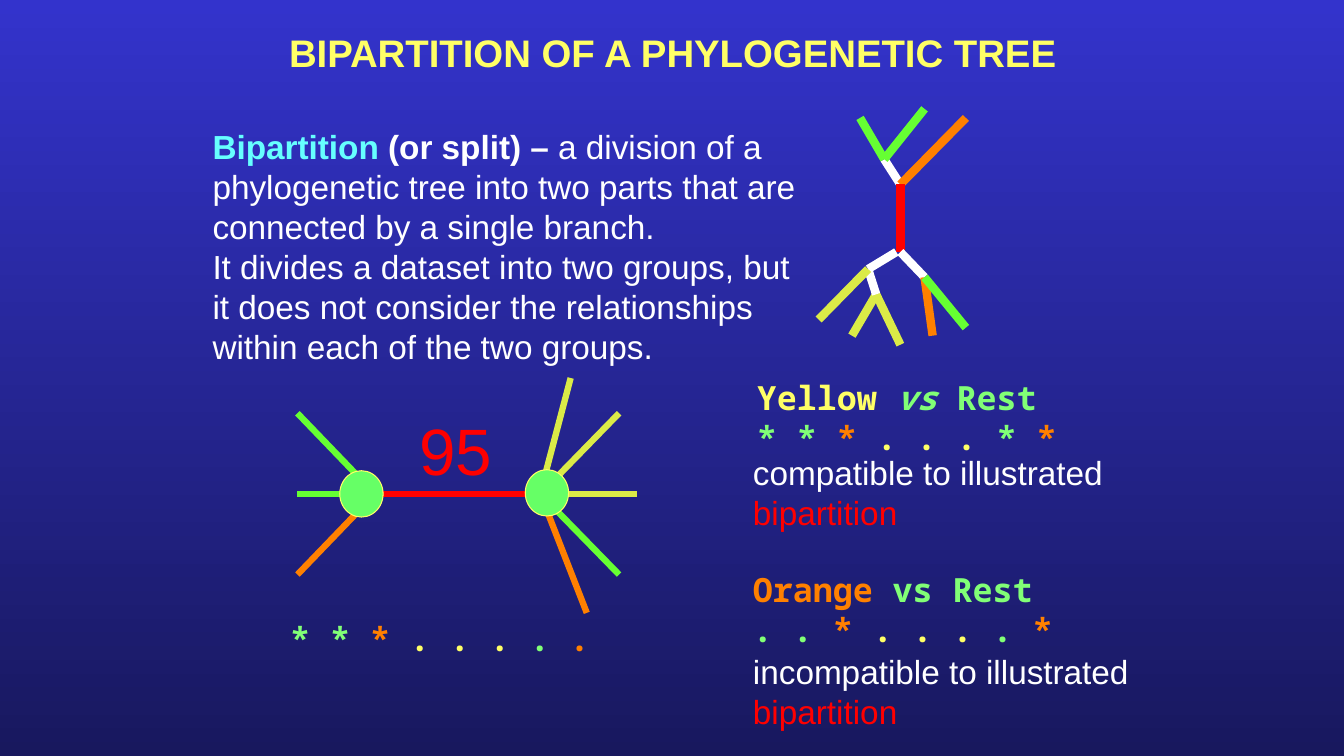
from lxml import etree
from pptx import Presentation
from pptx.dml.color import RGBColor
from pptx.enum.shapes import MSO_CONNECTOR as Connector, MSO_SHAPE as Shape
from pptx.enum.text import PP_ALIGN as Align
from pptx.oxml.ns import qn
from pptx.util import Inches, Pt

COLORS = {
    "sky": "3333CC", "night": "18185E", "white": "FFFFFF", "red": "FF0000",
    "title": "FFFF66", "cyan": "66FFFF", "lime": "DBEB47", "green": "66FF33",
    "orange": "FF8000", "node": "66FF66", "mint": "81FF76",
}

SANS, MONO = "Arial", "Noto Sans Mono"
BODY_SIZE = 23.8

TITLE = [[[("BIPARTITION OF A PHYLOGENETIC TREE", "title", "b")]]]
DEFINITION = [
    [[("Bipartition", "cyan", "b"), (" (or split) – ", "white", "b"),
      ("a division of a phylogenetic tree into two parts that are "
       "connected by a single branch.", "white", "")]],
    [[("It divides a dataset into two groups, but it does not consider "
       "the relationships within each of the two groups.", "white", "")]],
]
SUPPORT = [[[("95", "red", "")]]]
COMPATIBLE = [[[("compatible to illustrated ", "white", "")],
               [("bipartition", "red", "")]]]
INCOMPATIBLE = [[[("incompatible to illustrated ", "white", "")],
                 [("bipartition", "red", "")]]]
SPLIT_CODE = [[[("* * ", "mint", "b"), ("* ", "orange", "b"),
                (". . . ", "title", "b"), (". ", "mint", "b"),
                (".", "orange", "b")]]]
ORANGE_SPLIT = [[
    [("Orange ", "orange", "b"), ("vs Rest", "mint", "b")],
    [(". . ", "mint", "b"), ("* ", "orange", "b"), (". . . ", "title", "b"),
     (". ", "mint", "b"), ("*", "orange", "b")],
]]
YELLOW_SPLIT = [[
    [("Yellow ", "title", "b"), ("vs", "mint", "bi"), (" Rest ", "mint", "b")],
    [("* * ", "mint", "b"), ("* ", "orange", "b"), (". . . ", "title", "b"),
     ("* ", "mint", "b"), ("*", "orange", "b")],
]]

TEXTS = [
    (TITLE, (2.73, 0.24, 7.88, 0.56), SANS, 27.4, False, Align.CENTER),
    (DEFINITION, (2.01, 1.2, 6.03, 2.5), SANS, BODY_SIZE, True, Align.LEFT),
    (SUPPORT, (4.06, 4.02, 0.93, 0.89), SANS, 46.8, False, Align.LEFT),
    (COMPATIBLE, (7.37, 4.44, 3.8, 0.9), SANS, BODY_SIZE, False, Align.LEFT),
    (INCOMPATIBLE, (7.37, 6.41, 4.06, 0.9), SANS, BODY_SIZE, False, Align.LEFT),
    (SPLIT_CODE, (2.78, 6.08, 3.56, 0.5), MONO, BODY_SIZE, True, Align.LEFT),
    (ORANGE_SPLIT, (7.37, 5.6, 3.56, 0.9), MONO, BODY_SIZE, True, Align.LEFT),
    (YELLOW_SPLIT, (7.41, 3.69, 3.56, 0.9), MONO, BODY_SIZE, True, Align.LEFT),
]

LEFT_HUB, RIGHT_HUB = (3.72, 4.9), (5.36, 4.9)
STAR_BRANCHES = [
    (LEFT_HUB, RIGHT_HUB, "red"),
    (RIGHT_HUB, (6.14, 4.1), "lime"),
    (RIGHT_HUB, (6.14, 5.7), "green"),
    (LEFT_HUB, (2.95, 5.7), "orange"),
    (LEFT_HUB, (2.95, 4.1), "green"),
    ((5.37, 4.85), (5.66, 3.75), "lime"),
    (RIGHT_HUB, (5.82, 6.08), "orange"),
    (RIGHT_HUB, (6.32, 4.9), "lime"),
    (LEFT_HUB, (2.95, 4.9), "green"),
]
NODES = [(5.21, 4.66), (3.37, 4.67)]
NODE_SIZE = (0.43, 0.46)

TOP_FORK, UPPER, LOWER = (8.77, 1.58), (8.93, 1.83), (8.93, 2.5)
LEFT_FORK, INNER_FORK, RIGHT_FORK = (8.61, 2.67), (8.69, 2.92), (9.17, 2.75)
TREE_BRANCHES = [
    (TOP_FORK, UPPER, "white"),
    (TOP_FORK, (9.17, 1.08), "green"),
    (UPPER, (9.58, 1.17), "orange"),
    (UPPER, LOWER, "red"),
    (LEFT_FORK, (8.89, 2.5), "white"),
    (INNER_FORK, (8.45, 3.33), "lime"),
    (INNER_FORK, (8.93, 3.42), "lime"),
    (LOWER, RIGHT_FORK, "white"),
    (RIGHT_FORK, (9.25, 3.33), "orange"),
    (TOP_FORK, (8.53, 1.17), "green"),
    (LEFT_FORK, INNER_FORK, "white"),
    (LEFT_FORK, (8.12, 3.17), "lime"),
    (RIGHT_FORK, (9.58, 3.25), "green"),
]


def color(name):
    return RGBColor.from_string(COLORS[name])


def inches(values):
    return [Inches(value) for value in values]


def paint_background(slide):
    fill = slide.background.fill
    fill.gradient()
    fill.gradient_angle = 270
    for stop, position, name in zip(fill.gradient_stops, (0, 1), ("sky", "night")):
        stop.position = position
        stop.color.rgb = color(name)


def draw_branches(slide, branches, width):
    for start, end, name in branches:
        line = slide.shapes.add_connector(
            Connector.STRAIGHT, *inches(start + end))
        line.line.color.rgb = color(name)
        line.line.width = Pt(width)
        etree.SubElement(line._element.spPr, qn("a:effectLst"))


def draw_node(slide, corner):
    shape = slide.shapes.add_shape(Shape.OVAL, *inches(corner + NODE_SIZE))
    shape.shadow.inherit = False
    shape.fill.solid()
    shape.fill.fore_color.rgb = color("node")
    shape.line.color.rgb = color("title")
    shape.line.width = Pt(0.75)


def write_text(slide, paragraphs, box, font, size, wrap, align):
    text_frame = slide.shapes.add_textbox(*inches(box)).text_frame
    text_frame.word_wrap = wrap
    for index, lines in enumerate(paragraphs):
        paragraph = text_frame.add_paragraph() if index else text_frame.paragraphs[0]
        paragraph.alignment = align
        paragraph.font.size = Pt(size)
        for number, pieces in enumerate(lines):
            if number:
                paragraph.add_line_break()
            for words, name, style in pieces:
                run = paragraph.add_run()
                run.text = words
                run.font.name = font
                run.font.size = Pt(size)
                run.font.bold = "b" in style
                run.font.italic = "i" in style
                run.font.color.rgb = color(name)


def main():
    presentation = Presentation()
    presentation.slide_width, presentation.slide_height = inches((13.33, 7.5))
    slide = presentation.slides.add_slide(presentation.slide_layouts[6])
    paint_background(slide)
    draw_branches(slide, STAR_BRANCHES, 4.5)
    for corner in NODES:
        draw_node(slide, corner)
    draw_branches(slide, TREE_BRANCHES, 6)
    for entry in TEXTS:
        write_text(slide, *entry)
    presentation.save("out.pptx")


if __name__ == "__main__":
    main()
